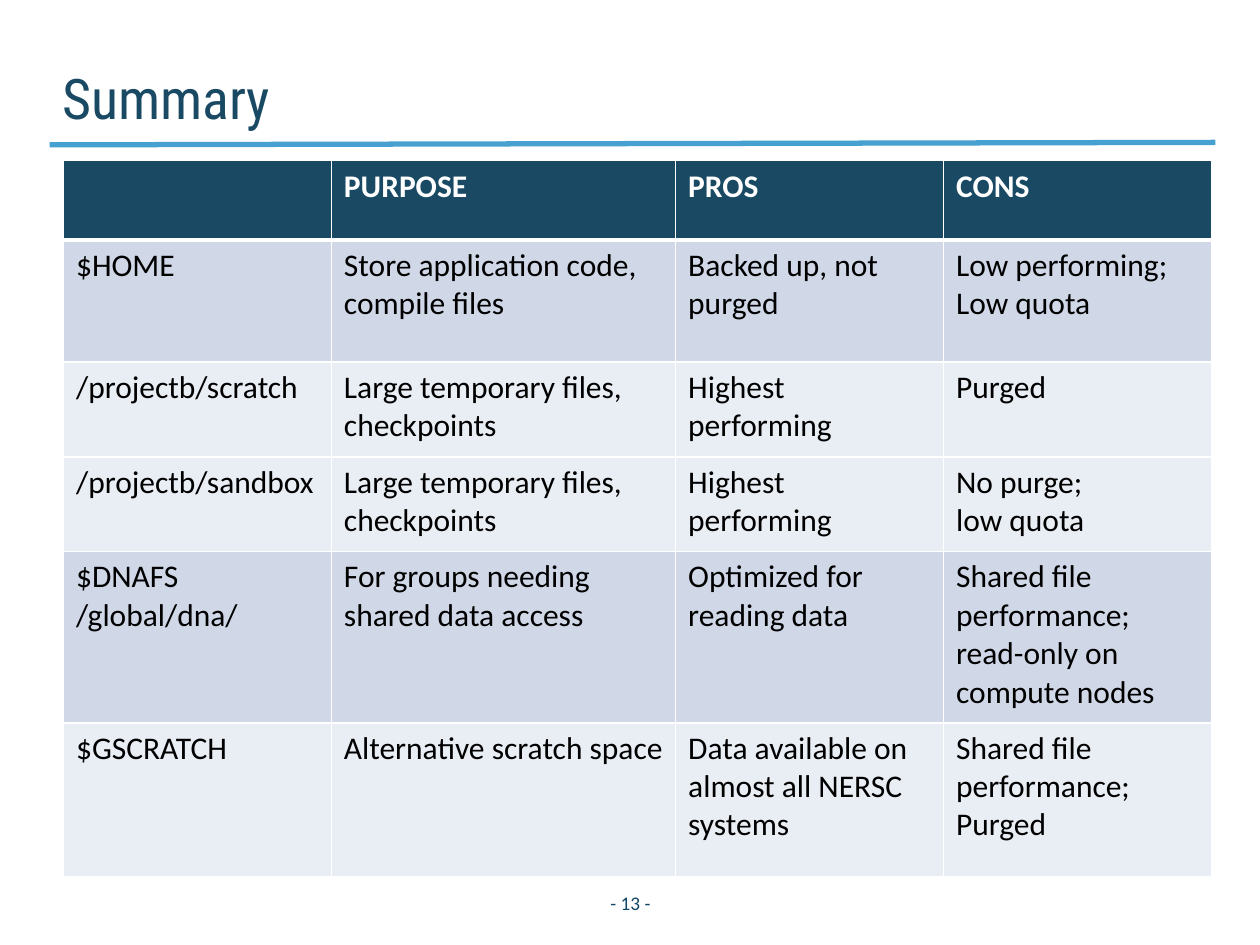
import pptx
import pptx.util
import pptx.dml.color
import pptx.enum.shapes
import pptx.enum.text
import pptx.oxml
import pptx.oxml.ns

Cm = pptx.util.Cm
Pt = pptx.util.Pt
RGBColor = pptx.dml.color.RGBColor
Align = pptx.enum.text.PP_ALIGN
Anchor = pptx.enum.text.MSO_ANCHOR

NAVY = RGBColor(0x19, 0x49, 0x63)
TEAL = RGBColor(0x11, 0x47, 0x66)
SKY = RGBColor(0x46, 0xA0, 0xD0)
DARK = RGBColor(0xD0, 0xD8, 0xE8)
PALE = RGBColor(0xE9, 0xED, 0xF4)
WHITE = RGBColor(0xFF, 0xFF, 0xFF)
BLACK = RGBColor(0, 0, 0)


def style(frame, face, size, color, bold=False):
    for para in frame.paragraphs:
        for run in para.runs:
            run.font.name = face
            run.font.size = Pt(size)
            run.font.color.rgb = color
            run.font.bold = bold


def border(cell, side, width):
    props = cell._tc.get_or_add_tcPr()
    props.append(pptx.oxml.parse_xml(
        f'<a:{side} {pptx.oxml.ns.nsdecls("a")} w="{Pt(width)}">'
        f'<a:solidFill><a:srgbClr val="{WHITE}"/></a:solidFill></a:{side}>'))


deck = pptx.Presentation()
deck.slide_width = Cm(25.4)
deck.slide_height = Cm(19.05)
slide = deck.slides.add_slide(deck.slide_layouts[5])

rule = slide.shapes.add_connector(
    pptx.enum.shapes.MSO_CONNECTOR.STRAIGHT, Cm(1), Cm(2.92), Cm(24.5), Cm(2.87))
rule.line.color.rgb = SKY
rule.line.width = Pt(3)
rule._element.spPr.append(
    pptx.oxml.parse_xml(f'<a:effectLst {pptx.oxml.ns.nsdecls("a")}/>'))

title = slide.shapes.title
title.left, title.top, title.width, title.height = Cm(1), Cm(0.5), Cm(19.56), Cm(2.14)
frame = title.text_frame
frame.text = "Summary"
frame.auto_size = pptx.enum.text.MSO_AUTO_SIZE.NONE
frame.vertical_anchor = Anchor.BOTTOM
frame.margin_top = frame.margin_bottom = 0
frame.paragraphs[0].alignment = Align.LEFT
style(frame, "Roboto Condensed", 32, NAVY)

page = slide.shapes.add_textbox(Cm(11.43), Cm(17.7), Cm(2.56), Cm(1.02))
frame = page.text_frame
frame.text = "- 13 -"
frame.word_wrap = True
frame.vertical_anchor = Anchor.MIDDLE
frame.paragraphs[0].alignment = Align.CENTER
style(frame, "Calibri", 11, TEAL)

rows = [
    (1.6, NAVY, ["", "PURPOSE", "PROS", "CONS"]),
    (2.46, DARK, ["$HOME", "Store application code, compile files",
                  "Backed up, not purged", "Low performing;\nLow quota"]),
    (1.91, PALE, ["/projectb/scratch", "Large temporary files, checkpoints",
                  "Highest performing", "Purged"]),
    (1.91, PALE, ["/projectb/sandbox", "Large temporary files, checkpoints",
                  "Highest\nperforming", "No purge;\nlow quota"]),
    (3.45, DARK, ["$DNAFS\n/global/dna/", "For groups needing shared data access",
                  "Optimized for reading data",
                  "Shared file performance; read-only on compute nodes"]),
    (3.1, PALE, ["$GSCRATCH", "Alternative scratch space",
                 "Data available on almost all NERSC systems",
                 "Shared file performance;\nPurged"]),
]
widths = [5.4, 6.94, 5.4, 5.4]
grid = slide.shapes.add_table(
    len(rows), len(widths), Cm(1.28), Cm(3.24), Cm(sum(widths)),
    Cm(sum(row[0] for row in rows))).table
grid.horz_banding = False
for col, width in zip(grid.columns, widths):
    col.width = Cm(width)
for r, (height, fill, texts) in enumerate(rows):
    grid.rows[r].height = Cm(height)
    head = r == 0
    for c, text in enumerate(texts):
        cell = grid.cell(r, c)
        cell.text_frame.text = text
        style(cell.text_frame, "Calibri", 18, WHITE if head else BLACK, head)
        border(cell, "lnL", 1)
        border(cell, "lnR", 1)
        border(cell, "lnT", 3 if r == 1 else 1)
        border(cell, "lnB", 3 if head else 1)
        cell.fill.solid()
        cell.fill.fore_color.rgb = fill

deck.save("out.pptx")
